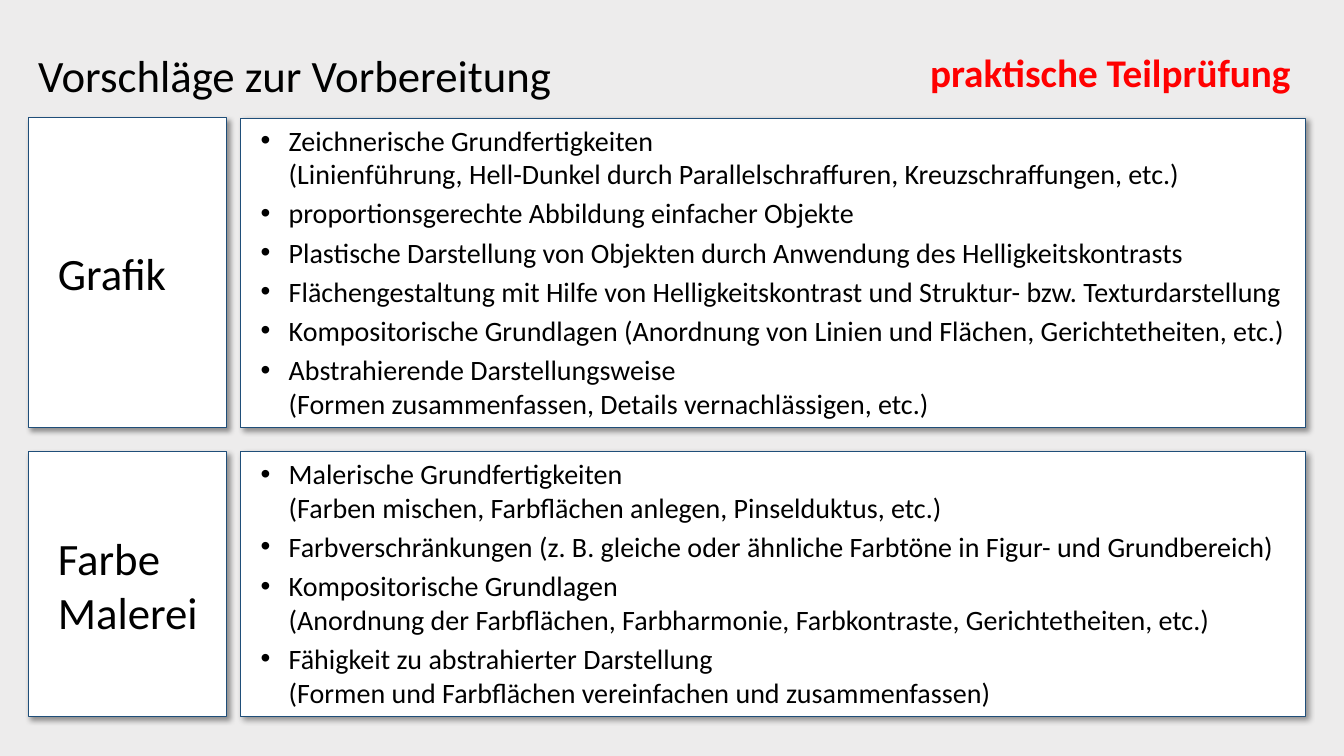
import copy

import pptx
import pptx.dml.color
import pptx.enum.shapes
import pptx.enum.text
import pptx.oxml.ns
import pptx.oxml.xmlchemy
import pptx.util

Pt = pptx.util.Pt
ANCHOR = pptx.enum.text.MSO_ANCHOR

COLORS = {
    "background": "EDECEC",
    "box": "FFFFFF",
    "border": "1F4E79",
    "text": "000000",
    "accent": "FF0000",
}
FONT = "Calibri"

LABEL_LEFT, LABEL_WIDTH = 20, 142
LIST_LEFT, LIST_WIDTH = 172, 760.5

# Each section: top, height, label lines, list items (\v is a line break)
SECTIONS = [
    (84.3, 221, ["Grafik"], [
        "Zeichnerische Grundfertigkeiten\v"
        "(Linienführung, Hell-Dunkel durch Parallelschraffuren, Kreuzschraffungen, etc.)",
        "proportionsgerechte Abbildung einfacher Objekte",
        "Plastische Darstellung von Objekten durch Anwendung des Helligkeitskontrasts",
        "Flächengestaltung mit Hilfe von Helligkeitskontrast und Struktur- bzw. Texturdarstellung",
        "Kompositorische Grundlagen (Anordnung von Linien und Flächen, Gerichtetheiten, etc.)",
        "Abstrahierende Darstellungsweise\v"
        "(Formen zusammenfassen, Details vernachlässigen, etc.)",
    ]),
    (322.6, 189.4, ["Farbe", "Malerei"], [
        "Malerische Grundfertigkeiten\v"
        "(Farben mischen, Farbflächen anlegen, Pinselduktus, etc.)",
        "Farbverschränkungen (z. B. gleiche oder ähnliche Farbtöne in Figur- und Grundbereich)",
        "Kompositorische Grundlagen\v"
        "(Anordnung der Farbflächen, Farbharmonie, Farbkontraste, Gerichtetheiten, etc.)",
        "Fähigkeit zu abstrahierter Darstellung\v"
        "(Formen und Farbflächen vereinfachen und zusammenfassen)",
    ]),
]


def rgb(name):
    return pptx.dml.color.RGBColor.from_string(COLORS[name])


def add_xml(parent, tag, **attributes):
    element = pptx.oxml.xmlchemy.OxmlElement(tag)
    for name, value in attributes.items():
        element.set(name, str(value))
    parent.append(element)
    return element


def place(shape, left, top, width, height):
    shape.left, shape.top = Pt(left), Pt(top)
    shape.width, shape.height = Pt(width), Pt(height)


def write_text(shape, lines, size, color="text", bold=False, anchor=ANCHOR.TOP,
               wrap=True, margin=0, indent=0, bullet=None, space_after=0):
    frame = shape.text_frame
    frame.word_wrap = wrap
    frame.auto_size = pptx.enum.text.MSO_AUTO_SIZE.NONE
    frame.vertical_anchor = anchor
    for index, line in enumerate(lines):
        paragraph = frame.add_paragraph() if index else frame.paragraphs[0]
        paragraph.text = line
        paragraph.alignment = pptx.enum.text.PP_ALIGN.LEFT
        properties = paragraph._p.get_or_add_pPr()
        properties.set("marL", str(Pt(margin)))
        properties.set("indent", str(Pt(indent)))
        if bullet:
            add_xml(properties, "a:buFont", typeface="Arial")
            add_xml(properties, "a:buChar", char=bullet)
        paragraph.space_before = Pt(0)
        paragraph.space_after = Pt(space_after)
        for run in paragraph.runs:
            run.font.name = FONT
            run.font.size = Pt(size)
            run.font.bold = bold
            run.font.color.rgb = rgb(color)
        # Line breaks take the same size as the text around them
        for line_break in paragraph._p.findall(pptx.oxml.ns.qn("a:br")):
            line_break.insert(0, copy.deepcopy(paragraph.runs[0]._r.rPr))


def style_box(shape):
    shape.fill.solid()
    shape.fill.fore_color.rgb = rgb("box")
    shape.line.color.rgb = rgb("border")
    shape.line.width = Pt(0.75)
    # Placeholders have no shadow property, so the effect list is added directly
    effects = add_xml(shape._element.spPr, "a:effectLst")
    shadow = add_xml(effects, "a:outerShdw", blurRad=Pt(4), dist=Pt(3),
                     dir=45 * 60000, algn="tl", rotWithShape=0)
    shade = add_xml(shadow, "a:srgbClr", val=COLORS["text"])
    add_xml(shade, "a:alpha", val=40000)


def add_label(slide, top, height, lines):
    label = slide.shapes.add_shape(
        pptx.enum.shapes.MSO_SHAPE.RECTANGLE,
        Pt(LABEL_LEFT), Pt(top), Pt(LABEL_WIDTH), Pt(height))
    style_box(label)
    write_text(label, lines, size=32, anchor=ANCHOR.MIDDLE, margin=14.2)


def fill_list(body, top, height, items):
    place(body, LIST_LEFT, top, LIST_WIDTH, height)
    style_box(body)
    write_text(body, items, size=20, margin=27, indent=-20, bullet="•", space_after=4)


def main():
    presentation = pptx.Presentation()
    presentation.slide_width, presentation.slide_height = Pt(960), Pt(540)
    slide = presentation.slides.add_slide(
        presentation.slide_layouts.get_by_name("Two Content"))
    slide.background.fill.solid()
    slide.background.fill.fore_color.rgb = rgb("background")

    # Headings
    title = slide.shapes.title
    place(title, LABEL_LEFT, 30.3, 384.5, 46)
    write_text(title, ["Vorschläge zur Vorbereitung"], size=32, wrap=False)
    exam_part = slide.shapes.add_textbox(Pt(657.3), Pt(31), Pt(275), Pt(41))
    write_text(exam_part, ["praktische Teilprüfung"], size=28, color="accent",
               bold=True, wrap=False)

    # Sections
    bodies = [slide.placeholders[1], slide.placeholders[2]]
    for body, (top, height, label, items) in zip(bodies, SECTIONS):
        add_label(slide, top, height, label)
        fill_list(body, top, height, items)

    presentation.save("out.pptx")


if __name__ == "__main__":
    main()
